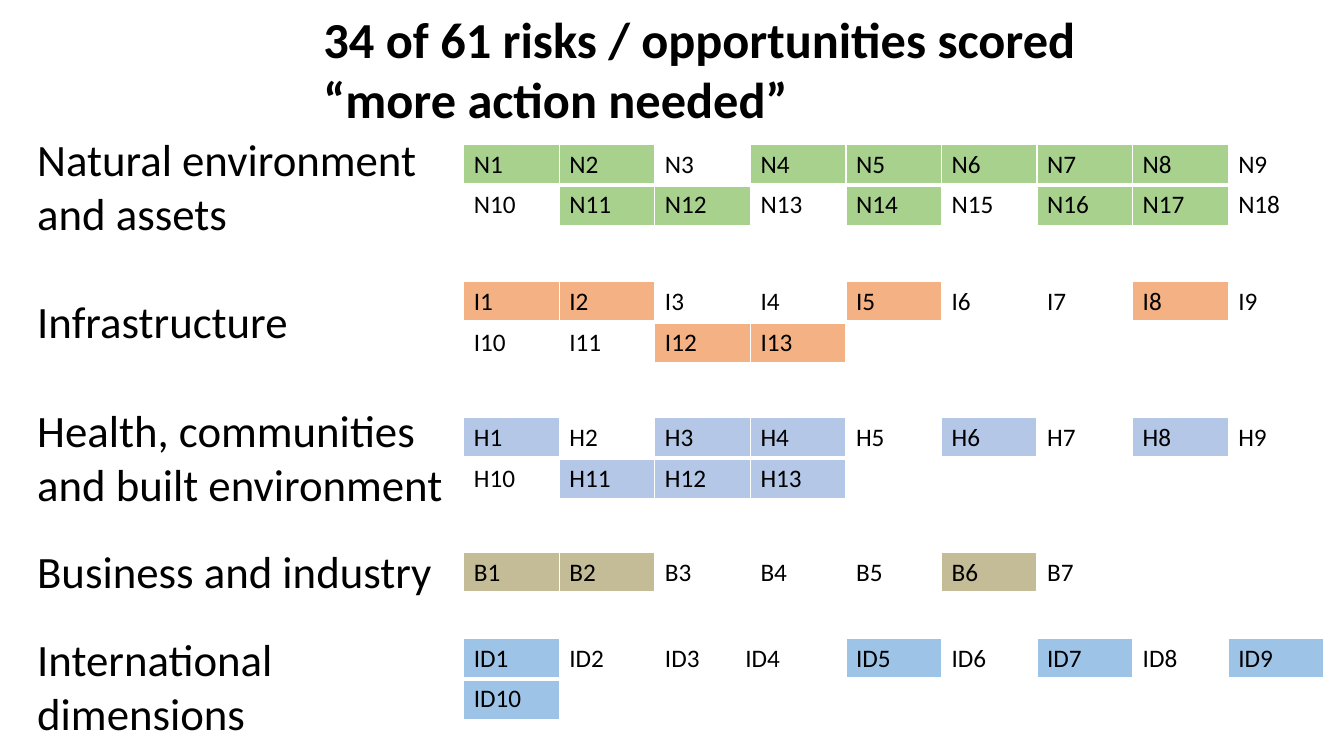
"""Build the slide that marks which climate risks need more action."""
from lxml.etree import SubElement
from pptx import Presentation
from pptx.dml.color import RGBColor
from pptx.oxml.ns import qn
from pptx.util import Inches, Pt

COLORS = {
    "text": "000000",
    "plain": "FFFFFF",
    "nature": "A9D18E",
    "infrastructure": "F4B183",
    "health": "B4C7E7",
    "business": "C4BC96",
    "international": "9DC3E6",
}
COLUMNS, ROWS = 9, 2
TABLE_LEFT, TABLE_WIDTH, TABLE_HEIGHT = 4.6, 8.53, 0.81

TITLE = ["34 of 61 risks / opportunities scored", "“more action needed”"]
LABELS = [
    ("Natural environment", 0),
    ("and assets", 0),
    ("Infrastructure", 39),
    ("Health, communities", 39),
    ("and built environment", 0),
    ("Business and industry", 24.4),
    ("International", 24.4),
    ("dimensions", 0),
]
RISK_GROUPS = [
    ("N", 18, {1, 2, 4, 5, 6, 7, 8, 11, 12, 14, 16, 17}, "nature", 1.43),
    ("I", 13, {1, 2, 5, 8, 12, 13}, "infrastructure", 2.79),
    ("H", 13, {1, 3, 4, 6, 8, 11, 12, 13}, "health", 4.14),
    ("B", 7, {1, 2, 6}, "business", 5.48),
    ("ID", 10, {1, 5, 7, 9, 10}, "international", 6.33),
]


def write(para, text, size=18, bold=False, before=0, font="Calibri", color="text"):
    """Add formatted text to a paragraph."""
    if before:
        para.space_before = Pt(before)
    span = para.add_run()
    span.text = text
    span.font.name = font
    span.font.size = Pt(size)
    span.font.bold = bold
    span.font.color.rgb = RGBColor.from_string(COLORS[color])


class RiskSlide:
    """Hold the palette and the page, and draw each kind of element."""

    def __init__(self, deck, colors):
        """Add a blank page to the deck."""
        self.colors = colors
        self.page = deck.slides.add_slide(deck.slide_layouts[6])

    def text_box(self, left, top, width, height, lines, **style):
        """Draw a text box from pairs of text and space before."""
        box = self.page.shapes.add_textbox(
            Inches(left), Inches(top), Inches(width), Inches(height))
        frame = box.text_frame
        frame.word_wrap = True
        for index, (text, before) in enumerate(lines):
            para = frame.add_paragraph() if index else frame.paragraphs[0]
            write(para, text, before=before, **style)

    def style_cell(self, cell, color, bottom):
        """Give a cell white borders and a solid fill."""
        properties = cell._tc.get_or_add_tcPr()
        for side, width in (("L", 1), ("R", 1), ("T", 1), ("B", bottom)):
            line = SubElement(properties, qn(f"a:ln{side}"), w=str(Pt(width)))
            fill = SubElement(line, qn("a:solidFill"))
            SubElement(fill, qn("a:srgbClr"), val=self.colors["plain"])
        cell.fill.solid()
        cell.fill.fore_color.rgb = RGBColor.from_string(self.colors[color])

    def risk_table(self, prefix, count, urgent, color, top, shift=0):
        """Draw numbered risks and colour the urgent ones."""
        table = self.page.shapes.add_table(
            ROWS, COLUMNS, Inches(TABLE_LEFT), Inches(top),
            Inches(TABLE_WIDTH), Inches(TABLE_HEIGHT)).table
        table.first_row = table.horz_banding = False
        table.columns[2].width -= Inches(shift)
        table.columns[3].width += Inches(shift)
        for index, cell in enumerate(table.iter_cells()):
            number = index + 1
            self.style_cell(cell, color if number in urgent else "plain",
                            3 if index < COLUMNS else 1)
            if number <= count:
                write(cell.text_frame.paragraphs[0], f"{prefix}{number}")


def main():
    """Build and save the deck."""
    deck = Presentation()
    deck.slide_width, deck.slide_height = Inches(13.33), Inches(7.5)
    slide = RiskSlide(deck, COLORS)
    slide.text_box(0.27, 1.26, 6.28, 6.23, LABELS, size=32)
    for group in RISK_GROUPS:
        slide.risk_table(*group, shift=0.15 if group[0] == "ID" else 0)
    slide.text_box(3.11, 0.03, 10.01, 1.31, [(line, 0) for line in TITLE],
                   size=36, bold=True)
    deck.save("out.pptx")


if __name__ == "__main__":
    main()
